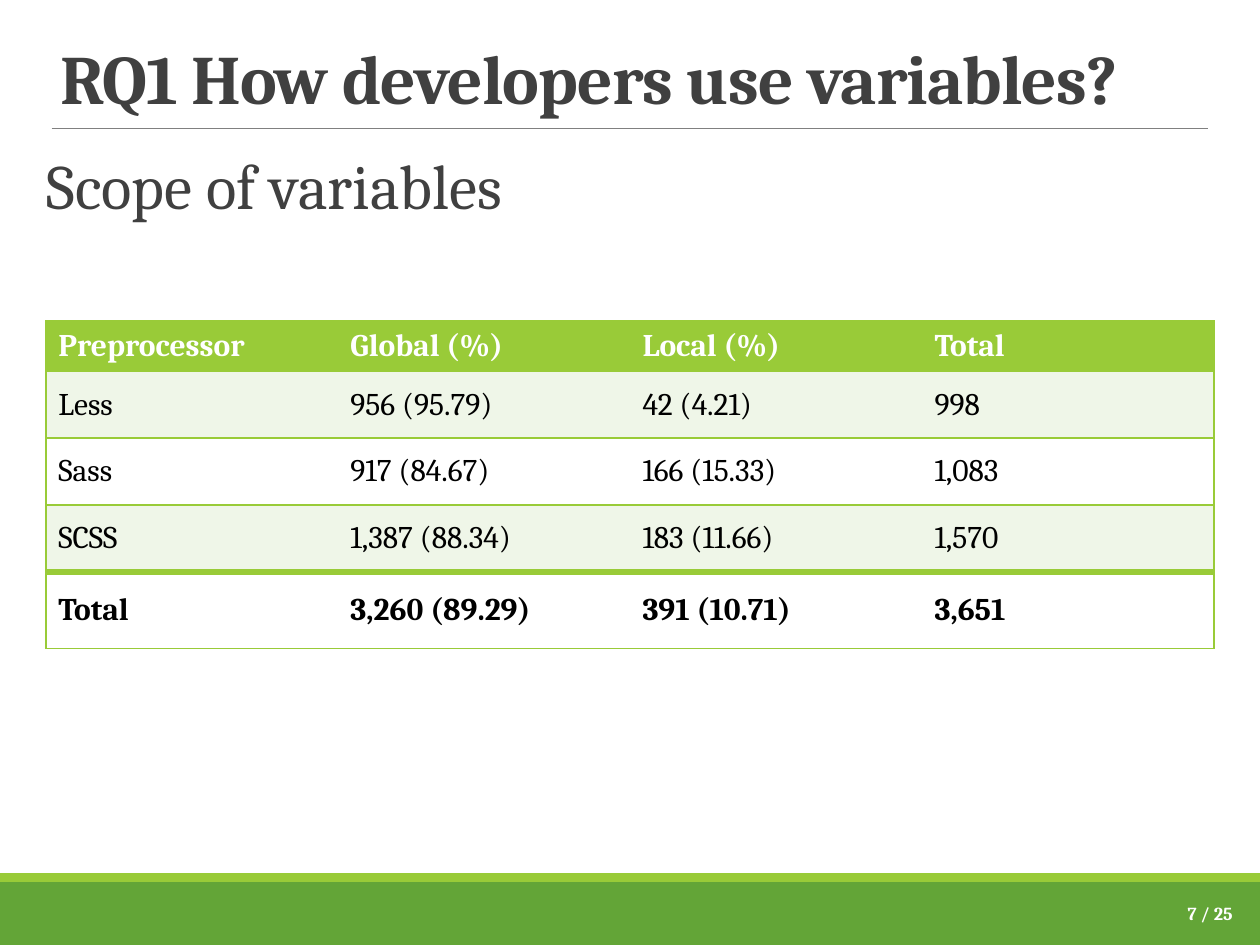
"""Build the slide on the scope of preprocessor variables."""
from lxml.etree import SubElement
from pptx import Presentation
from pptx.dml.color import RGBColor
from pptx.enum.shapes import MSO_CONNECTOR as CONN, MSO_SHAPE as SHAPE
from pptx.enum.text import MSO_ANCHOR as ANCHOR, PP_ALIGN as ALIGN
from pptx.oxml.ns import qn
from pptx.util import Pt

LIME, GREEN, PALE, WHITE = "99CB38", "63A537", "EFF6E8", "FFFFFF"
DARK, GREY, BLACK = "404040", "808080", "000000"


def rgb(color):
    return RGBColor.from_string(color)


def add_run(p, text, size, color, bold=False):
    r = p.add_run()
    r.text = text
    r.font.name = "Cambria"
    r.font.size = Pt(size)
    r.font.bold = bold
    r.font.color.rgb = rgb(color)
    return r


prs = Presentation()
prs.slide_width, prs.slide_height = Pt(720), Pt(540)
s = prs.slides.add_slide(prs.slide_layouts[6])

for top, height, color in [(504, 36, GREEN), (499, 5, LIME)]:
    sp = s.shapes.add_shape(SHAPE.RECTANGLE, 0, Pt(top), Pt(720), Pt(height))
    sp.shadow.inherit = False
    sp.fill.solid()
    sp.fill.fore_color.rgb = rgb(color)
    sp.line.fill.background()

rule = s.shapes.add_connector(CONN.STRAIGHT, Pt(29.5), Pt(73.4), Pt(690.5), Pt(73.4))
rule.line.color.rgb = rgb(GREY)
rule.line.width = Pt(0.5)
SubElement(rule._element.spPr, qn("a:effectLst"))

texts = [
    ("RQ1 How developers use variables?", (27.4, 8.6, 667.4, 59), 39.6, DARK, True,
     ANCHOR.BOTTOM, ALIGN.LEFT, (7.2, 0)),
    ("Scope of variables", (26.6, 85, 667.4, 377.3), 36, DARK, False,
     ANCHOR.TOP, ALIGN.LEFT, (0, 3.6)),
    ("7 / 25", (633.6, 507.6, 77.8, 28.8), 10.5, WHITE, True,
     ANCHOR.MIDDLE, ALIGN.RIGHT, (7.2, 3.6)),
]
runs = []
for text, box, size, color, bold, anchor, align, (side, edge) in texts:
    tf = s.shapes.add_textbox(*[Pt(v) for v in box]).text_frame
    tf.word_wrap = True
    tf.vertical_anchor = anchor
    tf.margin_left = tf.margin_right = Pt(side)
    tf.margin_top = tf.margin_bottom = Pt(edge)
    p = tf.paragraphs[0]
    p.alignment = align
    runs.append(add_run(p, text, size, color, bold))

title, scope, number = runs
title.font._element.set("spc", "-50")
p = s.shapes[4].text_frame.paragraphs[0]
p.line_spacing = 0.9
p.space_before, p.space_after = Pt(12), Pt(6)

rows = [
    ("Preprocessor", "Global (%)", "Local (%)", "Total"),
    ("Less", "956 (95.79)", "42 (4.21)", "998"),
    ("Sass", "917 (84.67)", "166 (15.33)", "1,083"),
    ("SCSS", "1,387 (88.34)", "183 (11.66)", "1,570"),
    ("Total", "3,260 (89.29)", "391 (10.71)", "3,651"),
]
heights = [27.4, 38.2, 38.2, 38.2, 43.9]
fills = [LIME, PALE, WHITE, PALE, WHITE]
last_row, last_col = len(rows) - 1, len(rows[0]) - 1
table = s.shapes.add_table(len(rows), len(rows[0]), Pt(26.2), Pt(183.4),
                           Pt(667.6), Pt(sum(heights))).table
table.horz_banding = False
for col in table.columns:
    col.width = Pt(166.9)

for i, row in enumerate(rows):
    table.rows[i].height = Pt(heights[i])
    for j, text in enumerate(row):
        cell = table.cell(i, j)
        cell.vertical_anchor = ANCHOR.MIDDLE
        add_run(cell.text_frame.paragraphs[0], text, 18,
                BLACK if i else WHITE, i in (0, last_row))
        borders = {
            "a:lnL": 1 if j == 0 else 0,
            "a:lnR": 1 if j == last_col else 0,
            "a:lnT": 4 if i == last_row else 1,
            "a:lnB": 4 if i == last_row - 1 else 1,
        }
        tc_pr = cell._tc.get_or_add_tcPr()
        for tag, width in borders.items():
            ln = SubElement(tc_pr, qn(tag), w=str(Pt(width)))
            if width:
                fill = SubElement(ln, qn("a:solidFill"))
                SubElement(fill, qn("a:srgbClr"), val=LIME)
            else:
                SubElement(ln, qn("a:noFill"))
        cell.fill.solid()
        cell.fill.fore_color.rgb = rgb(fills[i])

prs.save("out.pptx")
